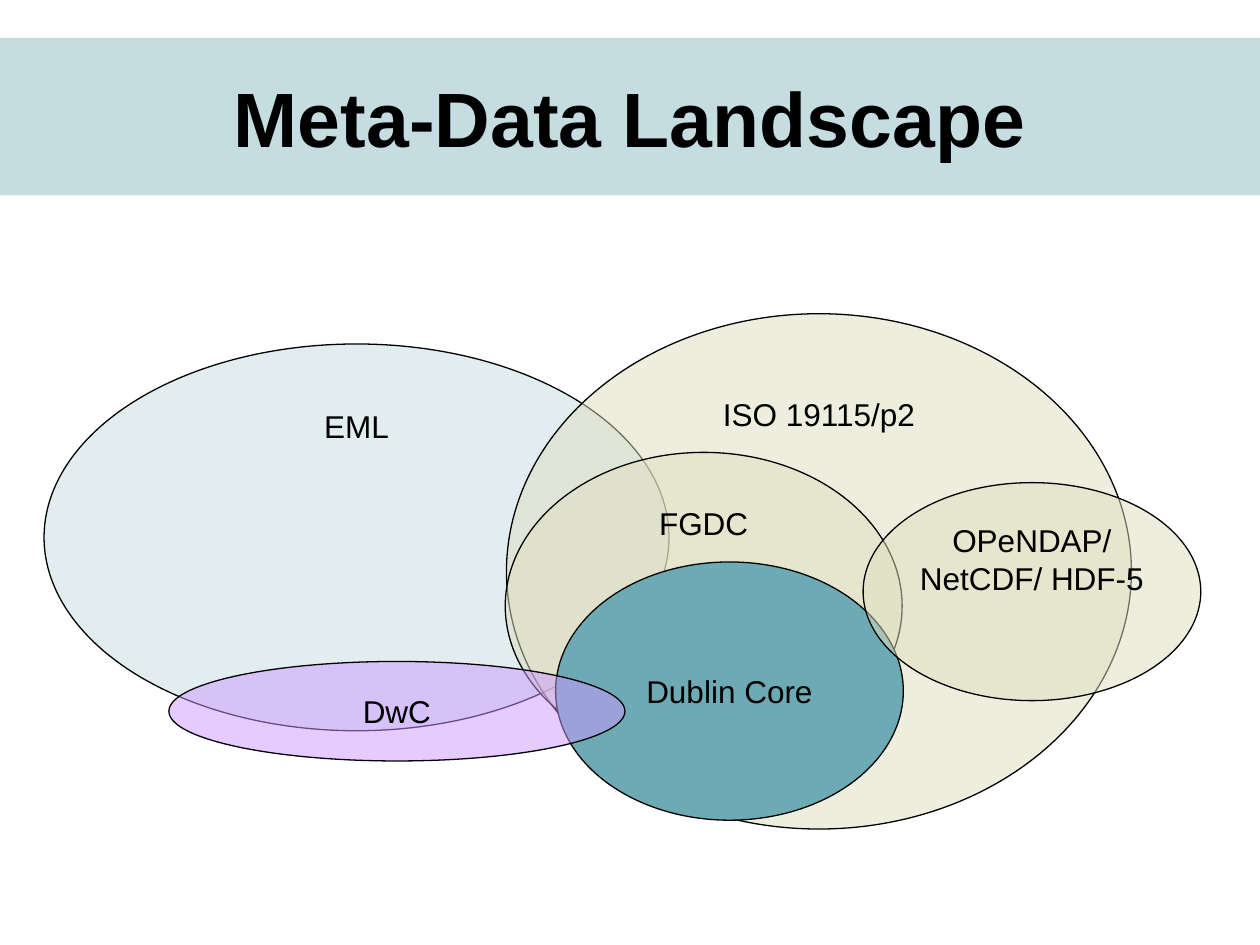
from lxml.etree import SubElement
from pptx import Presentation
from pptx.dml.color import RGBColor
from pptx.enum.shapes import MSO_SHAPE
from pptx.enum.text import MSO_ANCHOR, PP_ALIGN
from pptx.oxml.ns import qn
from pptx.util import Inches, Pt

COLORS = {
    "ink": "000000",
    "mist": "C5DDE1",
    "sand": "DFDFBF",
    "teal": "6EAAB4",
    "violet": "CC99FF",
}
FONT = "Arial"
TOP, MIDDLE = MSO_ANCHOR.TOP, MSO_ANCHOR.MIDDLE

TITLE = "Meta-Data Landscape"
TITLE_BAND = (0, 4, 100, 16.67)

STANDARDS_BEHIND = [
    (["EML"], (3.5, 36.4, 49.6, 40.93), "mist", 50, TOP),
    (["ISO 19115/p2"], (40.2, 33.2, 49.6, 54.53), "sand", 50, TOP),
    (["FGDC"], (40.1, 47.87, 31.5, 32.53), "sand", 50, TOP),
]
STANDARDS_IN_FRONT = [
    (["Dublin Core"], (44.1, 59.47, 27.6, 27.33), "teal", 100, MIDDLE),
    (["DwC"], (13.4, 70, 36.2, 10.53), "violet", 50, MIDDLE),
    (["OPeNDAP/", "NetCDF/ HDF-5"], (68.5, 51.07, 26.8, 23.07), "sand", 50, TOP),
]

deck = Presentation()
deck.slide_width, deck.slide_height = Inches(10), Inches(7.5)
slide = deck.slides.add_slide(deck.slide_layouts[6])


def rgb(name):
    return RGBColor.from_string(COLORS[name])


def add_region(outline, lines, shares, color, opacity, anchor, size, bold, wrap):
    sides = (deck.slide_width, deck.slide_height) * 2
    place = [round(side * share / 100) for side, share in zip(sides, shares)]
    region = slide.shapes.add_shape(outline, *place)
    region.shadow.inherit = False
    region.fill.solid()
    region.fill.fore_color.rgb = rgb(color)
    if opacity < 100:
        tint = region.fill._xPr.find(qn("a:solidFill"))[0]
        SubElement(tint, qn("a:alpha"), val=str(opacity * 1000))

    frame = region.text_frame
    frame.word_wrap = wrap
    frame.vertical_anchor = anchor
    for index, line in enumerate(lines):
        paragraph = frame.add_paragraph() if index else frame.paragraphs[0]
        paragraph.alignment = PP_ALIGN.CENTER
        run = paragraph.add_run()
        run.text = line
        run.font.name = FONT
        run.font.size = Pt(size)
        run.font.bold = bold
        run.font.color.rgb = rgb("ink")
    return region


def add_standards(standards):
    for lines, shares, color, opacity, anchor in standards:
        standard = add_region(MSO_SHAPE.OVAL, lines, shares, color, opacity,
                              anchor, 18, False, False)
        standard.line.color.rgb = rgb("ink")
        standard.line.width = Pt(0.75)


add_standards(STANDARDS_BEHIND)
title = add_region(MSO_SHAPE.RECTANGLE, [TITLE], TITLE_BAND, "mist", 100,
                   MIDDLE, 44, True, True)
title.line.fill.background()
add_standards(STANDARDS_IN_FRONT)

deck.save("out.pptx")
